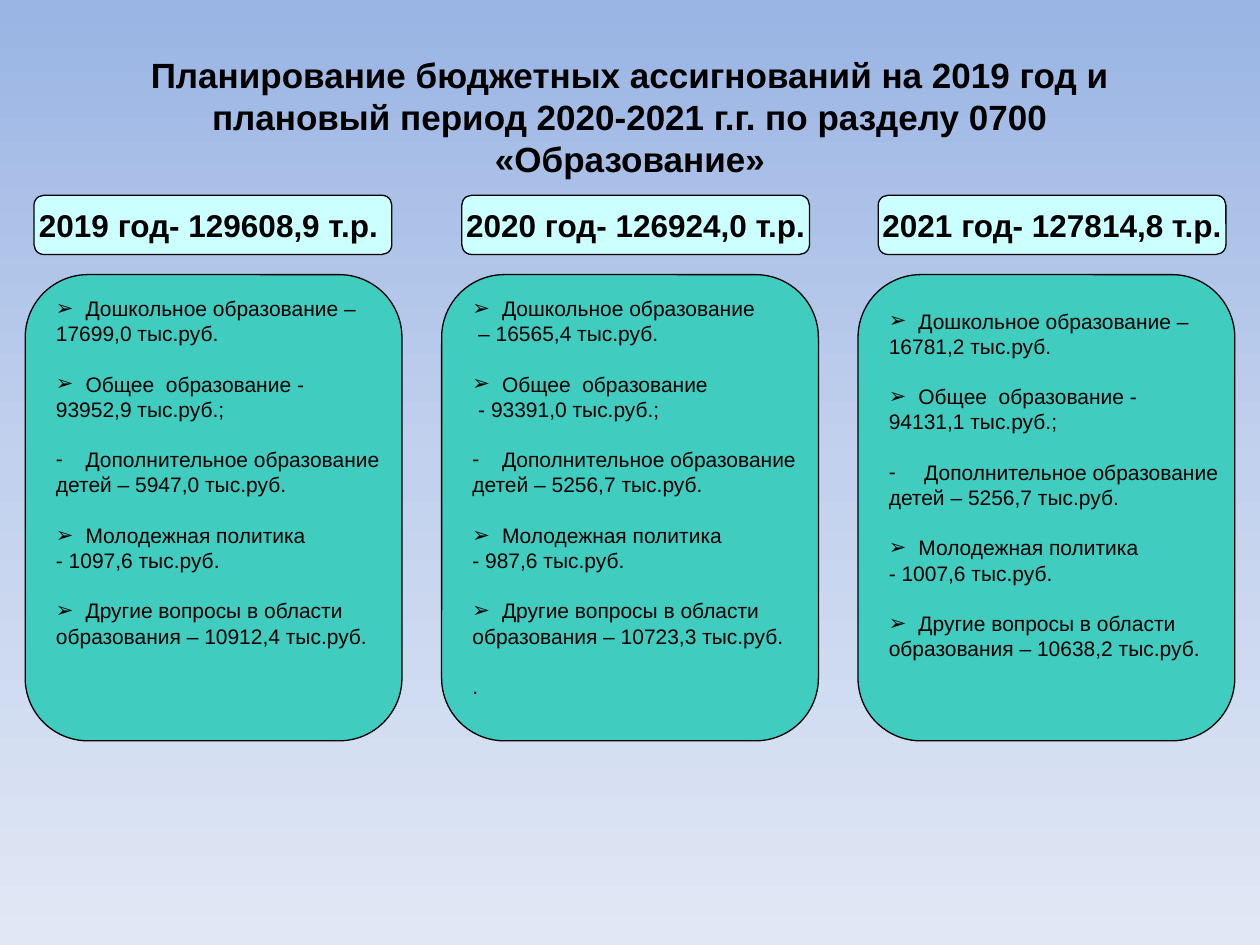
from copy import deepcopy
from lxml.etree import SubElement
from pptx import Presentation
from pptx.dml.color import RGBColor
from pptx.enum.shapes import MSO_SHAPE
from pptx.enum.text import MSO_ANCHOR, PP_ALIGN
from pptx.oxml.ns import qn
from pptx.util import Inches, Pt

COLOURS = {"ink": "000000", "header": "CCFFFF", "panel": "40CCBF",
           "sky": ["9AB5E4", "C2D1ED", "E1E8F5"]}
FONT = "Arial"
COLUMN_LEFT, COLUMN_STEP, PANEL_WIDTH = 0.2, 3.305, 2.99
BULLET_INDENT = 0.235
ARROW, DASH = "➢", "-"

YEARS = [
    {"header": "2019 год- 129608,9 т.р. ", "shift": 0.07, "width": 2.84, "top_inset": 0.02,
     "items": [(ARROW, "Дошкольное образование –", "17699,0 тыс.руб."),
               (ARROW, "Общее  образование -", "93952,9 тыс.руб.;"),
               (DASH, "Дополнительное образование", "детей – 5947,0 тыс.руб."),
               (ARROW, "Молодежная политика", "- 1097,6 тыс.руб."),
               (ARROW, "Другие вопросы в области", "образования – 10912,4 тыс.руб.")]},
    {"header": "2020 год- 126924,0 т.р.", "shift": 0.16, "width": 2.76, "top_inset": 0.02,
     "items": [(ARROW, "Дошкольное образование", " – 16565,4 тыс.руб."),
               (ARROW, "Общее  образование", " - 93391,0 тыс.руб.;"),
               (DASH, "Дополнительное образование", "детей – 5256,7 тыс.руб."),
               (ARROW, "Молодежная политика", "- 987,6 тыс.руб."),
               (ARROW, "Другие вопросы в области", "образования – 10723,3 тыс.руб."),
               (None, ".")]},
    {"header": "2021 год- 127814,8 т.р.", "shift": 0.16, "width": 2.76, "top_inset": 0.12,
     "items": [(ARROW, "Дошкольное образование –", "16781,2 тыс.руб."),
               (ARROW, "Общее  образование -", "94131,1 тыс.руб.;"),
               (DASH, " Дополнительное образование", "детей – 5256,7 тыс.руб."),
               (ARROW, "Молодежная политика", "- 1007,6 тыс.руб."),
               (ARROW, "Другие вопросы в области", "образования – 10638,2 тыс.руб.")]},
]


def write(para, text, size=12, bold=False, align=PP_ALIGN.LEFT, before=0, bullet=None):
    para.alignment = align
    para.space_before = Pt(before)
    span = para.add_run()
    span.text = text
    span.font.name = FONT
    span.font.size = Pt(size)
    span.font.bold = bold
    span.font.color.rgb = RGBColor.from_string(COLOURS["ink"])
    if bullet:
        properties = para._p.get_or_add_pPr()
        properties.set("marL", str(Inches(BULLET_INDENT)))
        properties.set("indent", str(-Inches(BULLET_INDENT)))
        SubElement(properties, qn("a:buFont")).set("typeface", FONT)
        SubElement(properties, qn("a:buChar")).set("char", bullet)


class BudgetSlide:
    def __init__(self, deck):
        self.page = deck.slides.add_slide(deck.slide_layouts[5])

    def background(self, colours):
        fill = self.page.background.fill
        fill.gradient()
        fill.gradient_angle = 270
        stops = self.page._element.find(".//" + qn("a:gsLst"))
        stops.insert(1, deepcopy(stops[0]))
        for index, (stop, colour) in enumerate(zip(fill.gradient_stops, colours)):
            stop.position = index / (len(colours) - 1)
            stop.color.rgb = RGBColor.from_string(colour)

    def title(self, text):
        box = self.page.shapes.title
        box.left, box.top, box.width, box.height = map(Inches, (0.5, 0.3, 9, 1.25))
        box.text_frame.vertical_anchor = MSO_ANCHOR.MIDDLE
        box.text_frame.word_wrap = True
        write(box.text_frame.paragraphs[0], text, size=20, bold=True, align=PP_ALIGN.CENTER)

    def rounded(self, left, top, width, height, colour, anchor):
        box = self.page.shapes.add_shape(MSO_SHAPE.ROUNDED_RECTANGLE,
                                         *map(Inches, (left, top, width, height)))
        box.shadow.inherit = False
        box.fill.solid()
        box.fill.fore_color.rgb = RGBColor.from_string(COLOURS[colour])
        box.line.color.rgb = RGBColor.from_string(COLOURS["ink"])
        box.line.width = Pt(0.75)
        box.text_frame.word_wrap = False
        box.text_frame.vertical_anchor = anchor
        return box.text_frame

    def header(self, column, year):
        left = COLUMN_LEFT + column * COLUMN_STEP + year["shift"]
        frame = self.rounded(left, 1.55, year["width"], 0.47, "header", MSO_ANCHOR.MIDDLE)
        write(frame.paragraphs[0], year["header"], size=18, bold=True, align=PP_ALIGN.CENTER)

    def panel(self, column, year):
        left = COLUMN_LEFT + column * COLUMN_STEP
        frame = self.rounded(left, 2.18, PANEL_WIDTH, 3.7, "panel", MSO_ANCHOR.TOP)
        frame.margin_top = Inches(year["top_inset"])
        para = frame.paragraphs[0]
        for index, (bullet, *lines) in enumerate(year["items"]):
            for row, text in enumerate(lines):
                if index or row:
                    para = frame.add_paragraph()
                write(para, text, bullet=None if row else bullet,
                      before=14.4 if index and not row else 0)


def main():
    deck = Presentation()
    deck.slide_width, deck.slide_height = Inches(10), Inches(7.5)
    slide = BudgetSlide(deck)
    slide.background(COLOURS["sky"])
    slide.title("Планирование бюджетных ассигнований на 2019 год и плановый период "
                "2020-2021 г.г. по разделу 0700 «Образование»")
    for column, year in enumerate(YEARS):
        slide.header(column, year)
        slide.panel(column, year)
    deck.save("out.pptx")


if __name__ == "__main__":
    main()
